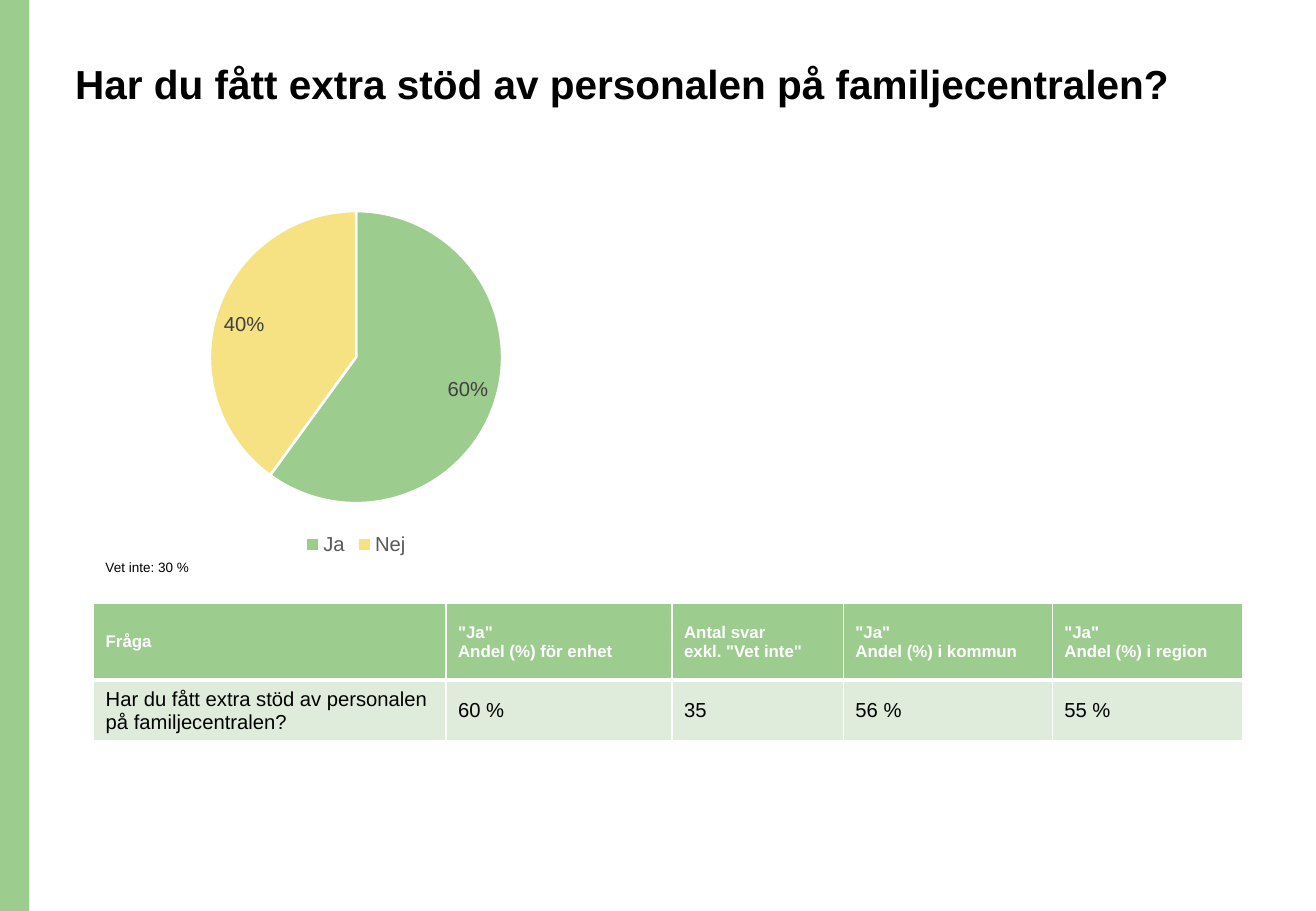
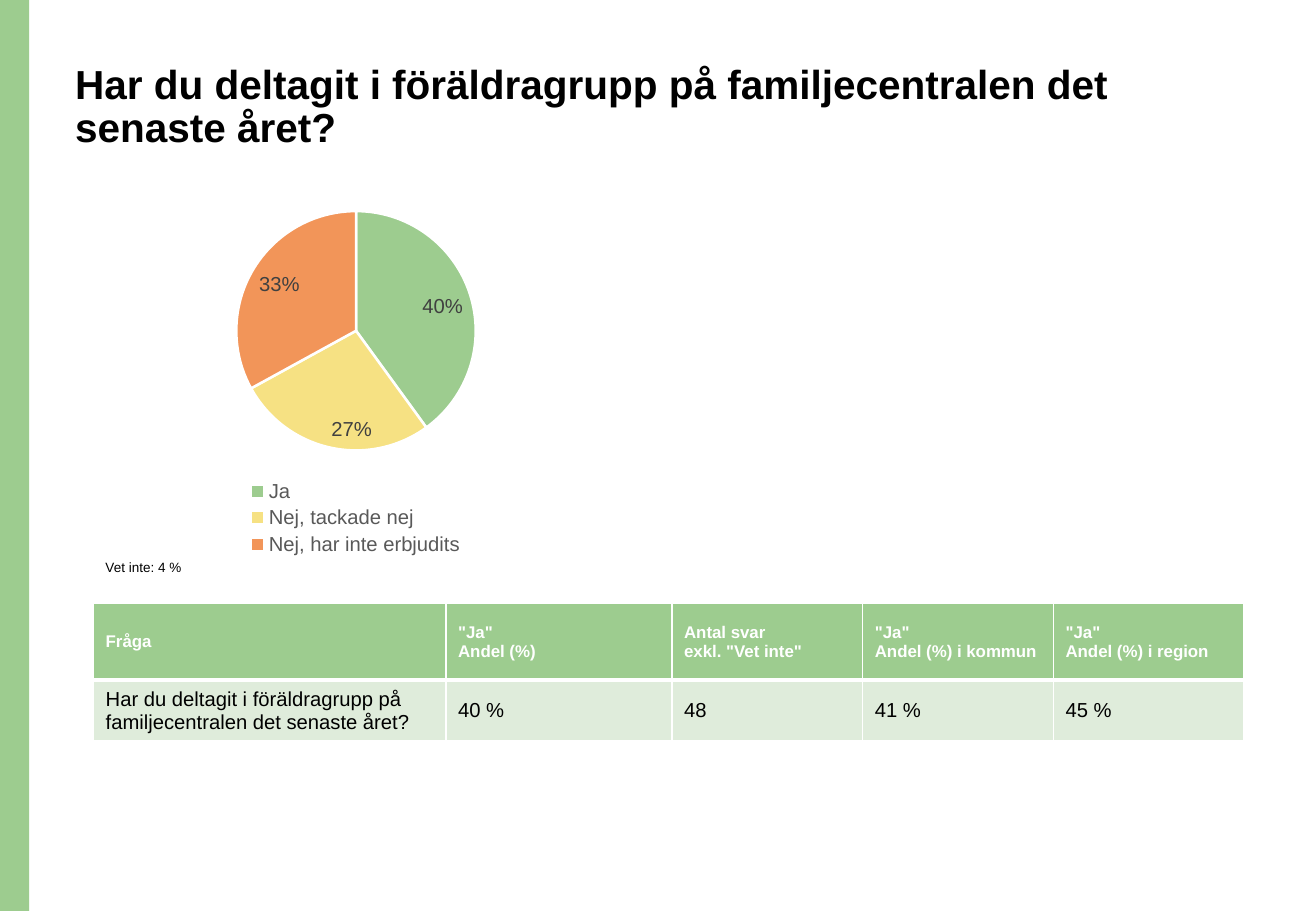
from lxml import etree
from pptx import Presentation
from pptx.chart.data import CategoryChartData
from pptx.dml.color import RGBColor
from pptx.enum.chart import XL_CHART_TYPE as ChartType
from pptx.enum.chart import XL_LABEL_POSITION as LabelPos
from pptx.enum.chart import XL_LEGEND_POSITION as LegendPos
from pptx.enum.shapes import MSO_SHAPE as Shape
from pptx.enum.text import MSO_ANCHOR as Anchor
from pptx.oxml.ns import qn
from pptx.util import Inches, Pt

# Shared look
WIDTH, HEIGHT = 10.83, 7.5
FONT = "Arial"
GREEN, YELLOW, ORANGE = "9DCC8F", "F6E183", "F29559"
PALE, WHITE, BLACK = "DFECDB", "FFFFFF", "000000"
LABEL_GREY, LEGEND_GREY = "404040", "595959"

# Regions: left, top, width, height
BAND = (0, 0, 0.24, HEIGHT)
TITLE = (0.52, 0.48, 9.34, 1.02)
CHART = (1.22, 1.6, 3.42, 3.01)
NOTE = (0.77, 4.49, 2.1, 0.48)
TABLE = (0.77, 4.97, 9.46, 1.1)
HEADER_HEIGHT = 0.63

QUESTIONS = [
    dict(
        title="Har du fått extra stöd av personalen på familjecentralen?",
        answers={"Ja": 0.6, "Nej": 0.4},
        note="Vet inte: 30 %",
        unit_header='"Ja"\nAndel (%) för enhet',
        figures=["60 %", "35", "56 %", "55 %"],
        columns=[2.9, 1.86, 1.41, 1.72, 1.57],
    ),
    dict(
        title="Har du deltagit i föräldragrupp på familjecentralen det senaste året?",
        answers={"Ja": 0.4, "Nej, tackade nej": 0.27,
                 "Nej, har inte erbjudits": 0.33},
        note="Vet inte: 4 %",
        unit_header='"Ja"\nAndel (%)',
        figures=["40 %", "48", "41 %", "45 %"],
        columns=[2.9, 1.86, 1.57, 1.57, 1.57],
    ),
]


def rgb(color):
    return RGBColor.from_string(color)


def inches(box):
    return [Inches(v) for v in box]


def style_font(font, size, color, bold=False):
    font.name, font.size, font.bold = FONT, Pt(size), bold
    font.color.rgb = rgb(color)


def write(tf, text, size=12, color=BLACK, bold=False, spacing=None):
    """Write one paragraph for each line of text."""
    tf.word_wrap = True
    for i, line in enumerate(text.split("\n")):
        p = tf.paragraphs[0] if i == 0 else tf.add_paragraph()
        if spacing:
            p.line_spacing = spacing
        r = p.add_run()
        r.text = line
        style_font(r.font, size, color, bold)


def add_text(slide, box, text, **fmt):
    write(slide.shapes.add_textbox(*inches(box)).text_frame, text, **fmt)


def add_band(slide, box):
    sp = slide.shapes.add_shape(Shape.RECTANGLE, *inches(box))
    sp.shadow.inherit = False
    sp.fill.solid()
    sp.fill.fore_color.rgb = rgb(GREEN)
    sp.line.fill.background()


def add_pie(slide, box, answers):
    data = CategoryChartData(number_format="0%")
    data.categories = list(answers)
    data.add_series("Series 1", list(answers.values()))
    chart = slide.shapes.add_chart(ChartType.PIE, *inches(box), data).chart
    chart.has_title = False
    style_font(chart.font, 10, BLACK)

    # Legend
    chart.has_legend = True
    chart.legend.position = LegendPos.BOTTOM
    chart.legend.include_in_layout = False
    style_font(chart.legend.font, 12, LEGEND_GREY)

    # Slices
    plot = chart.plots[0]
    plot.vary_by_categories = True
    for i, color in zip(range(len(answers)), (GREEN, YELLOW, ORANGE)):
        look = plot.series[0].points[i].format
        look.fill.solid()
        look.fill.fore_color.rgb = rgb(color)
        look.line.color.rgb = rgb(WHITE)
        look.line.width = Pt(1.5)

    # Value labels
    labels = plot.series[0].data_labels
    labels.show_value = True
    labels.position = LabelPos.INSIDE_END
    labels.number_format = '[<0.01]"";[>0.01]0%'
    labels.number_format_is_linked = False
    style_font(labels.font, 12, LABEL_GREY)


def set_borders(cell, **widths):
    """Draw white borders; the keys are L, R, T and B in that order."""
    tc_pr = cell._tc.get_or_add_tcPr()
    for side, width in widths.items():
        ln = etree.SubElement(tc_pr, qn("a:ln" + side), w=str(Pt(width)))
        fill = etree.SubElement(ln, qn("a:solidFill"))
        etree.SubElement(fill, qn("a:srgbClr"), val=WHITE)


def add_result_table(slide, box, columns, rows):
    table = slide.shapes.add_table(len(rows), len(columns), *inches(box)).table
    for column, width in zip(table.columns, columns):
        column.width = Inches(width)
    heights = (HEADER_HEIGHT, box[3] - HEADER_HEIGHT)
    looks = (
        dict(fill=GREEN, fmt=dict(size=10, color=WHITE, bold=True),
             borders=dict(L=1, R=1, T=1, B=3)),
        dict(fill=PALE, fmt=dict(size=12), borders=dict(L=1, R=1, T=3, B=1)),
    )
    for row, height, texts, look in zip(table.rows, heights, rows, looks):
        row.height = Inches(height)
        for cell, text in zip(row.cells, texts):
            set_borders(cell, **look["borders"])
            cell.fill.solid()
            cell.fill.fore_color.rgb = rgb(look["fill"])
            cell.vertical_anchor = Anchor.MIDDLE
            write(cell.text_frame, text, **look["fmt"])


def add_question_slide(prs, title, answers, note, unit_header, figures, columns):
    slide = prs.slides.add_slide(prs.slide_layouts[6])
    add_band(slide, BAND)
    add_text(slide, TITLE, title, size=24, bold=True, spacing=0.9)
    add_pie(slide, CHART, answers)
    headers = ["Fråga", unit_header, 'Antal svar\nexkl. "Vet inte"',
               '"Ja"\nAndel (%) i kommun', '"Ja"\nAndel (%) i region']
    add_result_table(slide, TABLE, columns, [headers, [title, *figures]])
    add_text(slide, NOTE, note, size=8, spacing=1.5)


def main():
    prs = Presentation()
    prs.slide_width, prs.slide_height = Inches(WIDTH), Inches(HEIGHT)
    for question in QUESTIONS:
        add_question_slide(prs, **question)
    prs.save("out.pptx")


if __name__ == "__main__":
    main()
